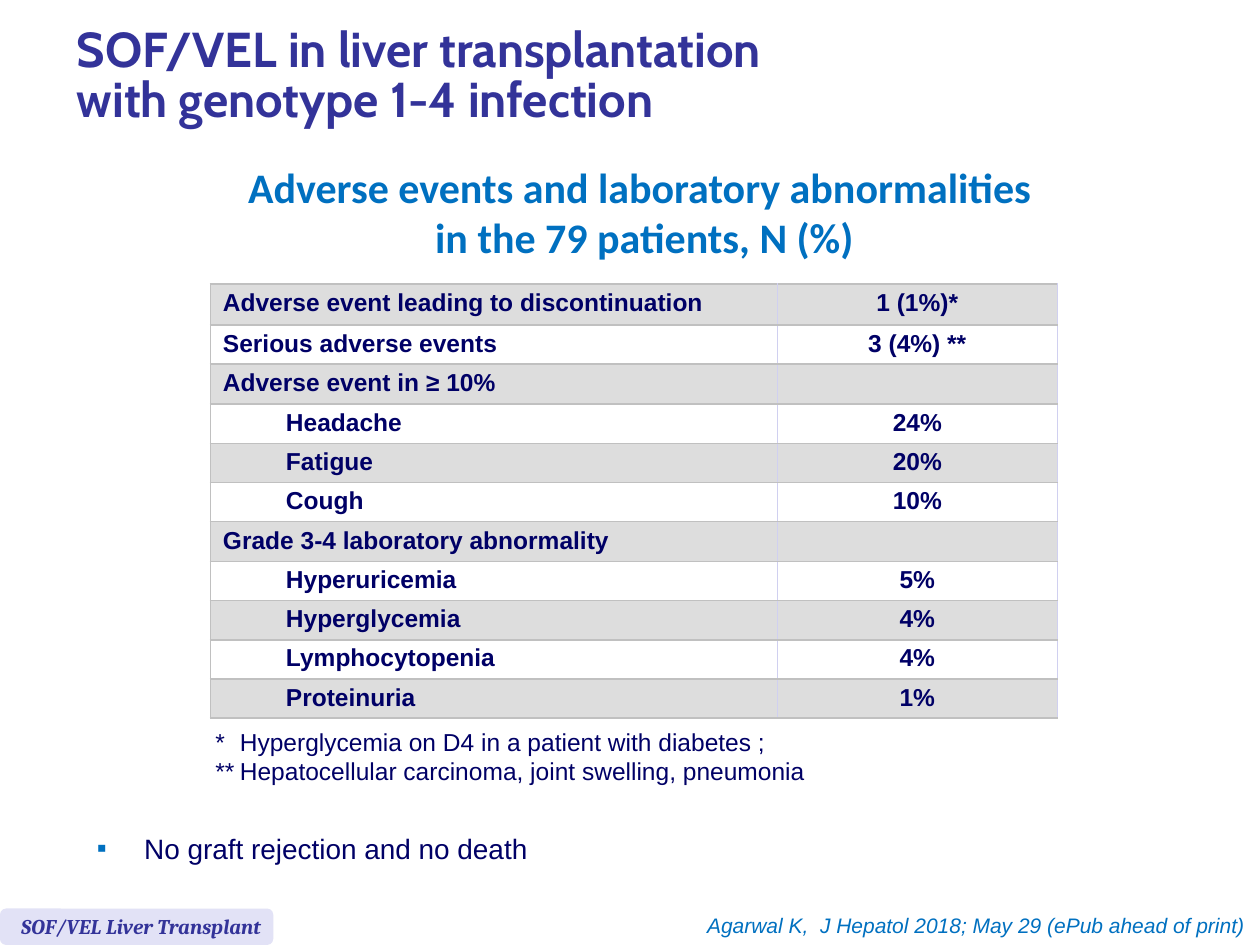
from pptx import Presentation
from pptx.util import Pt
from pptx.dml.color import RGBColor
from pptx.enum.shapes import MSO_SHAPE
from pptx.enum.text import PP_ALIGN, MSO_ANCHOR, MSO_AUTO_SIZE
from lxml.etree import SubElement
from pptx.oxml.ns import qn

NAVY = RGBColor(0x00, 0x00, 0x66)
BLUE = RGBColor(0x00, 0x70, 0xC0)
INDIGO = RGBColor(0x33, 0x33, 0x99)
PALE = RGBColor(0xE2, 0xE2, 0xF6)
GREY = RGBColor(0xDD, 0xDD, 0xDD)
WHITE = RGBColor(0xFF, 0xFF, 0xFF)
SILVER = RGBColor(0xC0, 0xC0, 0xC0)
LILAC = RGBColor(0xD0, 0xD0, 0xF0)


def write(para, text, size, color, face="Arial", bold=False, italic=False):
    run = para.add_run()
    run.text = text
    font = run.font
    font.size, font.name = Pt(size), face
    font.bold, font.italic = bold, italic
    font.color.rgb = color


def add_box(shapes, left, top, width, height, lines, style, align=PP_ALIGN.LEFT):
    box = shapes.add_textbox(Pt(left), Pt(top), Pt(width), Pt(height))
    frame = box.text_frame
    frame.word_wrap = True
    for n, line in enumerate(lines):
        para = frame.add_paragraph() if n else frame.paragraphs[0]
        para.alignment = align
        write(para, line, **style)
    return frame


deck = Presentation()
deck.slide_width, deck.slide_height = Pt(720), Pt(540)
slide = deck.slides.add_slide(deck.slide_layouts[1])
shapes = slide.shapes

title = shapes.title
title.left, title.top, title.width, title.height = Pt(36.7), Pt(5.8), Pt(683.3), Pt(77)
title.text_frame.auto_size = MSO_AUTO_SIZE.NONE
title.text_frame.vertical_anchor = MSO_ANCHOR.MIDDLE
para = title.text_frame.paragraphs[0]
para.alignment = PP_ALIGN.LEFT
para.line_spacing = 0.85
head = dict(size=28, color=INDIGO, face="Cabin", bold=True)
write(para, "SOF/VEL in liver transplantation ", **head)
para.add_line_break()
write(para, "with genotype 1-4 infection", **head)

add_box(shapes, 23.8, 88.6, 689, 65.5,
        ["Adverse events and laboratory abnormalities ", "in the 79 patients, N (%)"],
        dict(size=24, color=BLUE, face="Calibri", bold=True), PP_ALIGN.CENTER)

rows = [
    ("Adverse event leading to discontinuation", "1 (1%)*", 0, 23.4),
    ("Serious adverse events", "3 (4%) **", 0, 21.6),
    ("Adverse event in ≥ 10%", "", 0, 22.9),
    ("Headache", "24%", 36, 21.6),
    ("Fatigue", "20%", 36, 21.6),
    ("Cough", "10%", 36, 21.6),
    ("Grade 3-4 laboratory abnormality", "", 0, 22.9),
    ("Hyperuricemia", "5%", 36, 21.6),
    ("Hyperglycemia", "4%", 36, 21.6),
    ("Lymphocytopenia", "4%", 36, 21.6),
    ("Proteinuria", "1%", 36, 21.6),
]
total = sum(row[3] for row in rows)
table = shapes.add_table(len(rows), 2, Pt(120.2), Pt(162.3), Pt(484), Pt(total)).table
table.first_row = table.horz_banding = False
table.columns[0].width, table.columns[1].width = Pt(324), Pt(160)
for r, (label, value, indent, height) in enumerate(rows):
    table.rows[r].height = Pt(height)
    for c, text in enumerate((label, value)):
        cell = table.cell(r, c)
        cell.vertical_anchor = MSO_ANCHOR.MIDDLE
        cell.margin_top = cell.margin_bottom = Pt(3.6 if text else 0)
        props = cell._tc.get_or_add_tcPr()
        edges = (("lnL", LILAC if c else SILVER), ("lnR", LILAC),
                 ("lnT", SILVER), ("lnB", SILVER))
        for edge, color in edges:
            line = SubElement(props, qn("a:" + edge), w=str(Pt(1)))
            paint = SubElement(line, qn("a:solidFill"))
            SubElement(paint, qn("a:srgbClr"), val=str(color))
        cell.fill.solid()
        cell.fill.fore_color.rgb = WHITE if r % 2 else GREY
        para = cell.text_frame.paragraphs[0]
        para.line_spacing = 0.9
        if c:
            para.alignment = PP_ALIGN.CENTER
        elif indent:
            para.level = 1
            para._p.get_or_add_pPr().set("marL", str(Pt(indent)))
        if text:
            write(para, text, 14, NAVY, bold=True)

notes = add_box(shapes, 116, 411.8, 487.5, 41,
                ["*\tHyperglycemia on D4 in a patient with diabetes ;",
                 "**\tHepatocellular carcinoma, joint swelling, pneumonia"],
                dict(size=14, color=NAVY))
for para in notes.paragraphs:
    props = para._p.get_or_add_pPr()
    props.set("marL", str(Pt(14)))
    props.set("indent", str(-Pt(14)))

body = slide.placeholders[1]
body.left, body.top, body.width, body.height = Pt(48.2), Pt(471.6), Pt(261.4), Pt(26.6)
body.text_frame.auto_size = MSO_AUTO_SIZE.NONE
para = body.text_frame.paragraphs[0]
props = para._p.get_or_add_pPr()
props.set("marL", str(Pt(27)))
props.set("indent", str(-Pt(27)))
tint = SubElement(props, qn("a:buClr"))
SubElement(tint, qn("a:srgbClr"), val=str(BLUE))
SubElement(props, qn("a:buFont"), typeface="Arial")
SubElement(props, qn("a:buChar"), char="▪")
para.space_before = Pt(0)
write(para, "No graft rejection and no death", 16, NAVY)

add_box(shapes, 320.4, 517.7, 398.2, 21.6,
        ["Agarwal K,  J Hepatol 2018; May 29 (ePub ahead of print)"],
        dict(size=12, color=BLUE, italic=True), PP_ALIGN.RIGHT)

group = shapes.add_group_shape()
badge = group.shapes.add_shape(MSO_SHAPE.ROUNDED_RECTANGLE, Pt(0), Pt(519.2), Pt(156.2), Pt(20.8))
badge.adjustments[0] = 0.17
badge.shadow.inherit = False
badge.fill.solid()
badge.fill.fore_color.rgb = PALE
badge.line.fill.background()
add_box(group.shapes, 5, 518.4, 162, 21.6, ["SOF/VEL Liver Transplant"],
        dict(size=12, color=INDIGO, face="Cambria", bold=True, italic=True))

deck.save("out.pptx")
